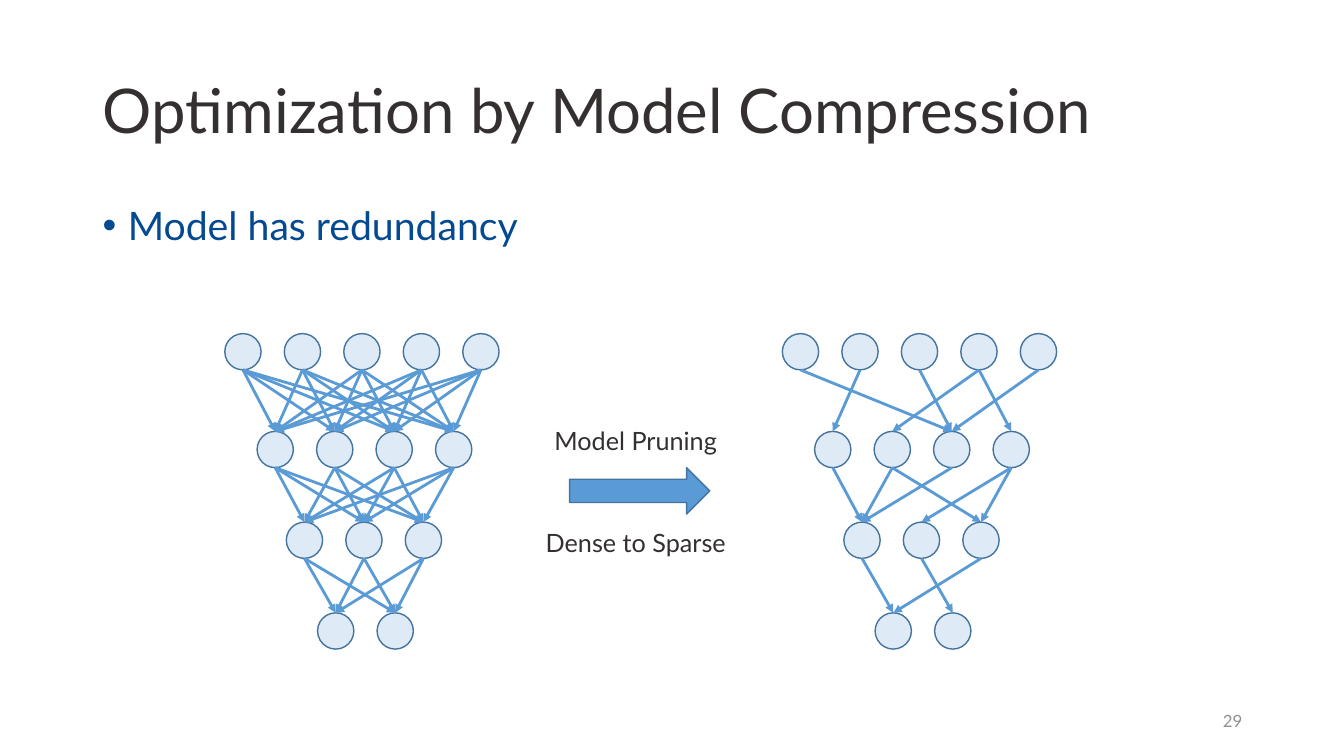
from itertools import product

from lxml.etree import SubElement
from pptx import Presentation
from pptx.dml.color import RGBColor
from pptx.enum.shapes import MSO_CONNECTOR, MSO_SHAPE
from pptx.enum.text import MSO_ANCHOR, MSO_AUTO_SIZE, PP_ALIGN
from pptx.oxml.ns import qn
from pptx.util import Inches, Pt

COLORS = {
    "text": "343030",
    "bullet": "034A90",
    "number": "908F8F",
    "node": "DEEBF7",
    "outline": "43739E",
    "accent": "5B9BD5",
}
FONT = "Lato"
LAYERS = [(5, 0, 3.31), (4, 0.32, 4.28), (3, 0.61, 5.18), (2, 0.92, 6.08)]
NODE_SIZE = 0.36
NODE_PITCH = 0.59
DENSE_LINKS = [list(product(range(upper[0]), range(lower[0])))
               for upper, lower in zip(LAYERS, LAYERS[1:])]
SPARSE_LINKS = [
    [(0, 2), (1, 0), (2, 2), (3, 3), (3, 1), (4, 2)],
    [(0, 0), (1, 0), (2, 0), (1, 2), (3, 2), (3, 1)],
    [(0, 0), (1, 1), (2, 0)],
]


def color(name):
    """Return the palette colour with the given name."""
    return RGBColor.from_string(COLORS[name])


def write_text(shape, text, size, ink="text", align=PP_ALIGN.LEFT,
               anchor=MSO_ANCHOR.TOP, spacing=1.0, before=0):
    """Fill a shape with one formatted paragraph and return it."""
    frame = shape.text_frame
    frame.word_wrap = True
    frame.auto_size = MSO_AUTO_SIZE.NONE
    frame.vertical_anchor = anchor
    para = frame.paragraphs[0]
    para.alignment = align
    para.line_spacing = spacing
    para.space_before = Pt(before)
    span = para.add_run()
    span.text = text
    span.font.name = FONT
    span.font.size = Pt(size)
    span.font.color.rgb = color(ink)
    return para


class SlideBuilder:
    """Draws styled elements on the current slide."""

    def __init__(self, page):
        """Keep the slide to draw on."""
        self.page = page

    def title(self, text, left, top, width, height):
        """Place and format the title placeholder."""
        box = self.page.shapes.title
        box.left, box.top = Inches(left), Inches(top)
        box.width, box.height = Inches(width), Inches(height)
        write_text(box, text, 44, anchor=MSO_ANCHOR.MIDDLE, spacing=0.9)

    def text(self, text, left, top, width, height, size, **style):
        """Add a text box and return its paragraph."""
        box = self.page.shapes.add_textbox(
            Inches(left), Inches(top), Inches(width), Inches(height))
        return write_text(box, text, size, **style)

    def bullet(self, text, left, top, width, height):
        """Add a bulleted line with a hanging indent."""
        para = self.text(text, left, top, width, height, 28,
                         ink="bullet", spacing=0.9, before=10)
        properties = para._p.get_or_add_pPr()
        properties.set("marL", str(Inches(0.25)))
        properties.set("indent", str(Inches(-0.25)))
        SubElement(properties, qn("a:buFont")).set("typeface", "Arial")
        SubElement(properties, qn("a:buChar")).set("char", "•")

    def shape(self, kind, left, top, width, height, fill):
        """Add a filled and outlined preset shape."""
        shape = self.page.shapes.add_shape(
            kind, Inches(left), Inches(top), Inches(width), Inches(height))
        shape.shadow.inherit = False
        shape.fill.solid()
        shape.fill.fore_color.rgb = color(fill)
        shape.line.color.rgb = color("outline")
        shape.line.width = Pt(1)
        return shape

    def link(self, source, target):
        """Join the bottom of one node to the top of another with an arrow."""
        arrow = self.page.shapes.add_connector(MSO_CONNECTOR.STRAIGHT, 0, 0, 0, 0)
        arrow.begin_connect(source, 2)
        arrow.end_connect(target, 0)
        ellipse_bottom = "4"
        arrow._element.find(".//" + qn("a:stCxn")).set("idx", ellipse_bottom)
        arrow.line.color.rgb = color("accent")
        arrow.line.width = Pt(2)
        SubElement(arrow.line._get_or_add_ln(), qn("a:tailEnd")).set("type", "triangle")
        SubElement(arrow._element.spPr, qn("a:effectLst"))

    def network(self, left, links):
        """Draw the layers of a network and the links between them."""
        layers = [
            [self.shape(MSO_SHAPE.OVAL, left + offset + column * NODE_PITCH, top,
                        NODE_SIZE, NODE_SIZE, "node") for column in range(count)]
            for count, offset, top in LAYERS
        ]
        for upper, lower, pairs in zip(layers, layers[1:], links):
            for source, target in pairs:
                self.link(upper[source], lower[target])


def main():
    """Build the slide and save the deck."""
    deck = Presentation()
    deck.slide_width, deck.slide_height = Inches(13.33), Inches(7.5)
    builder = SlideBuilder(deck.slides.add_slide(deck.slide_layouts[5]))
    builder.title("Optimization by Model Compression", 0.92, 0.4, 11.5, 1.45)
    builder.bullet("Model has redundancy", 0.92, 2, 11.5, 4.76)
    builder.text("29", 9.42, 6.95, 3, 0.4, 12, ink="number",
                 align=PP_ALIGN.RIGHT, anchor=MSO_ANCHOR.MIDDLE)
    builder.network(2.23, DENSE_LINKS)
    builder.network(7.76, SPARSE_LINKS)
    builder.shape(MSO_SHAPE.RIGHT_ARROW, 5.65, 4.64, 1.39, 0.46, "accent")
    for caption, top in [("Model Pruning", 4.17), ("Dense to Sparse", 5.18)]:
        builder.text(caption, 5.31, top, 1.99, 0.4, 18, align=PP_ALIGN.CENTER)
    deck.save("out.pptx")


if __name__ == "__main__":
    main()
